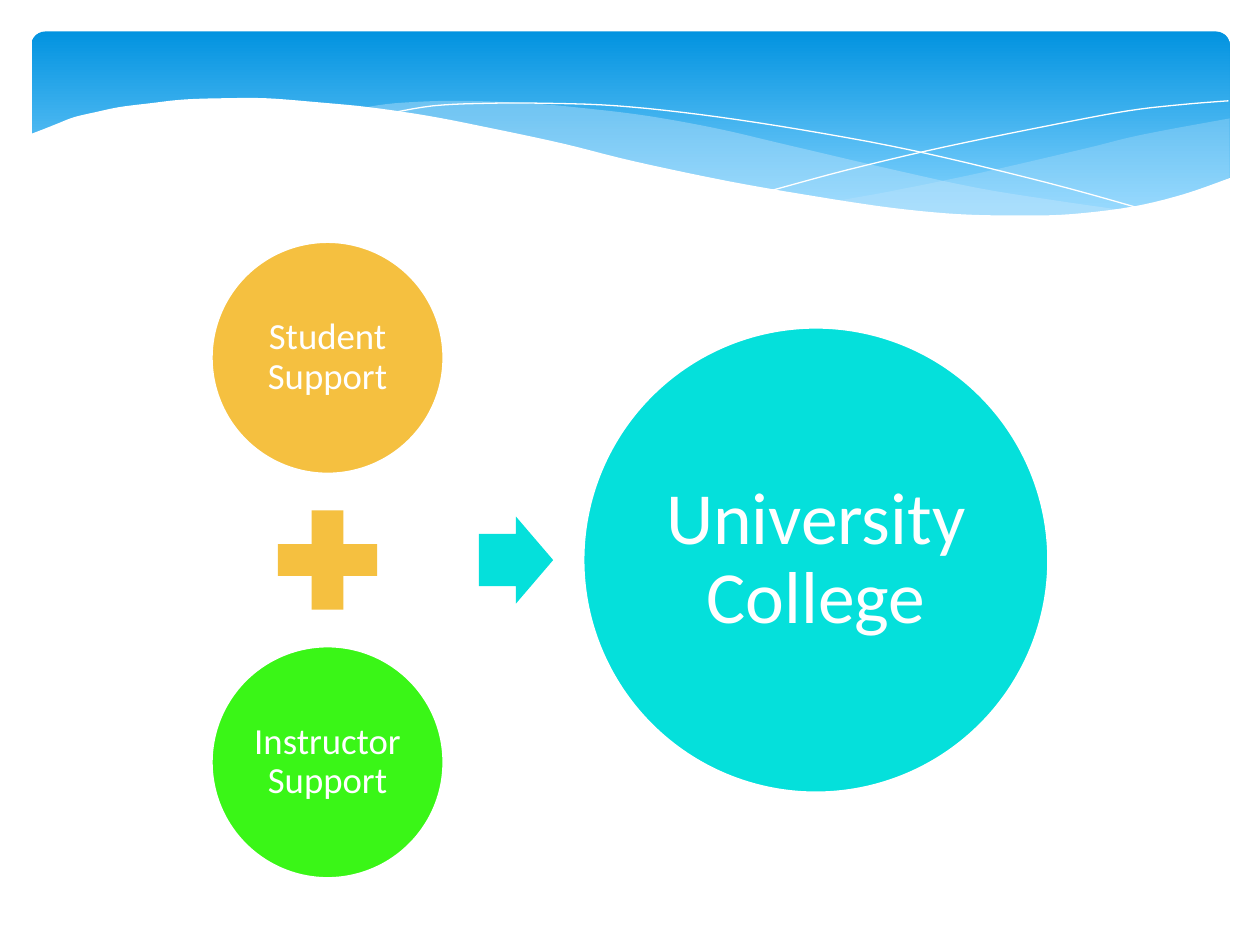
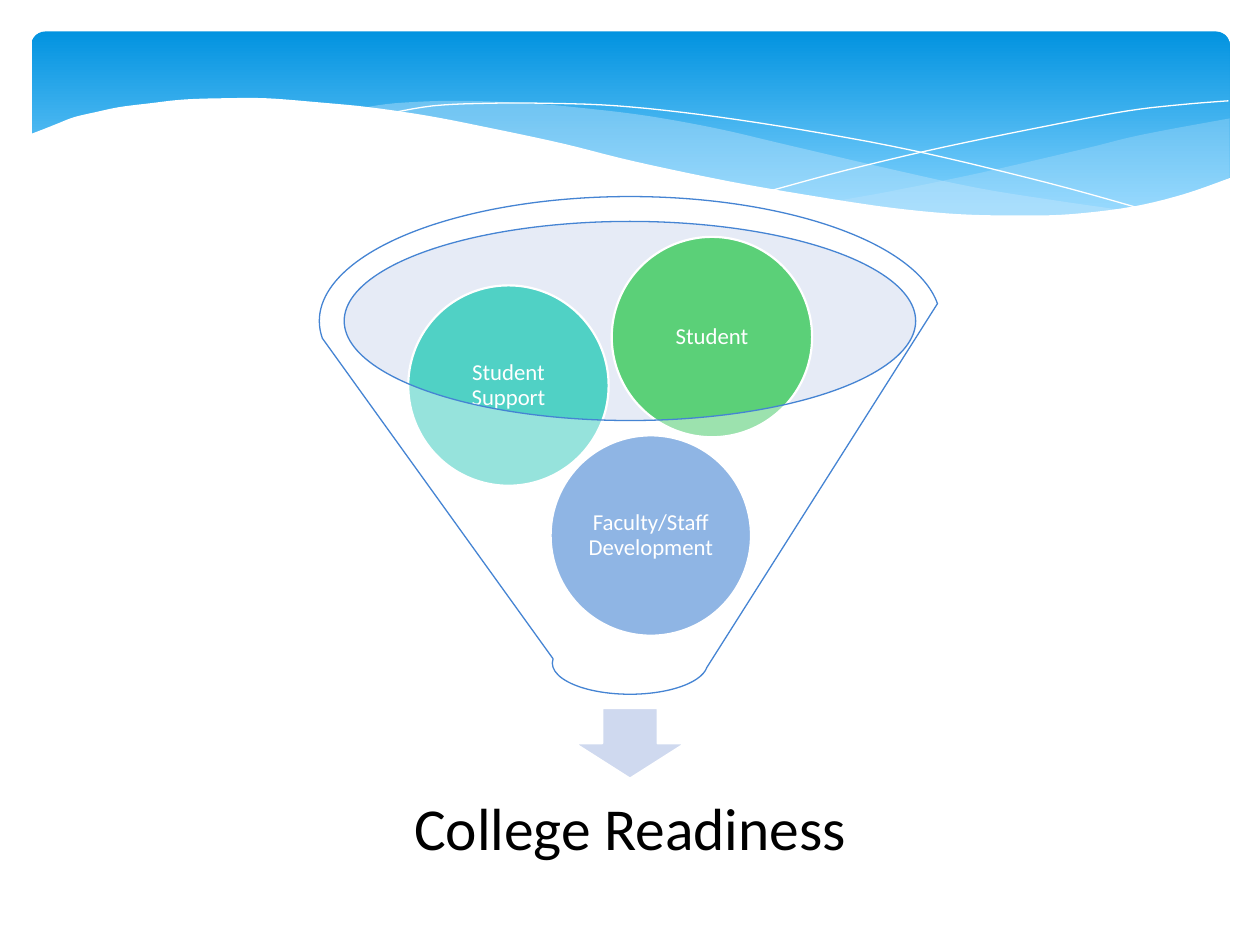
from lxml import etree
from pptx import Presentation
from pptx.dml.color import RGBColor
from pptx.enum.shapes import MSO_SHAPE
from pptx.enum.text import MSO_ANCHOR, PP_ALIGN
from pptx.oxml.ns import qn
from pptx.util import Inches, Pt

OVAL, ROUND_RECT = MSO_SHAPE.OVAL, MSO_SHAPE.ROUNDED_RECTANGLE
PLUS, FUNNEL = MSO_SHAPE.MATH_PLUS, MSO_SHAPE.FUNNEL
RIGHT_ARROW, DOWN_ARROW = MSO_SHAPE.RIGHT_ARROW, MSO_SHAPE.DOWN_ARROW
MIDDLE, CENTER = MSO_ANCHOR.MIDDLE, PP_ALIGN.CENTER

COLS, ROWS = 100, 75
FONT = "Calibri"
WHITE, BLACK = "FFFFFF", "000000"
SKY, PALE_SKY, VEIL = "0293E0", "83D3FE", "C6E7FC"
GOLD, LIME, CYAN = "F5C040", "3AF617", "05E0DB"
BLUE, TEAL, GREEN = "4584D3", "50D1C5", "5BD078"
RIM, PALE_ARROW = "C1CEEA", "CFD9EF"

RIGHT_VEIL_TOP = [(97.6, 9.4), (90.6, 10.7), (86.1, 11.8), (77.9, 13.7),
                  (70.6, 15.2), (66.1, 16)]
RIGHT_VEIL_BOTTOM = [(66.1, 16), (71.9, 16.7), (76.9, 17.1), (81.4, 17.2),
                     (86.3, 17), (90.5, 16.3), (94.2, 15.4), (97.6, 14.1)]
WIDE_VEIL_TOP = [(89.3, 16.7), (83.7, 15.9), (77.5, 14.9), (70.6, 13.4),
                 (62.9, 11.6), (56.9, 10.2), (51.4, 9.2), (46.5, 8.6),
                 (42, 8.2), (36.1, 8), (31.3, 8.2), (28.6, 8.6)]
WIDE_VEIL_BOTTOM = [(28.6, 8.6), (34.2, 9.4), (40.4, 10.6), (44.9, 11.6),
                    (53, 13.5), (60.1, 15), (66.5, 16.1), (72.2, 16.8),
                    (77.3, 17.2), (82.8, 17.3), (86.7, 17), (89.3, 16.7)]
FALLING_LINE = [(30.9, 9), (34.4, 8.4), (38.7, 8.2), (43.3, 8.2), (48.9, 8.4),
                (55.6, 9.1), (63.6, 10.3), (72.7, 12), (83.1, 14.5), (90.7, 16.6)]
RISING_LINE = [(61.3, 15.1), (67.2, 13.5), (74.8, 11.7), (83.6, 9.9),
               (89.5, 8.8), (93.8, 8.3), (97.5, 8)]
WAVE_EDGE = [(97.7, 14.1), (94, 15.4), (89.9, 16.4), (85, 17), (80.9, 17.1),
             (76.1, 17), (70.8, 16.5), (64.8, 15.6), (57.9, 14.4), (50.3, 12.8),
             (44.7, 11.4), (39.1, 10.2), (34, 9.2), (29.2, 8.5), (25, 8.1),
             (21.1, 7.8), (17.7, 7.8), (14.6, 7.9), (11.9, 8.2), (9.5, 8.5),
             (7.6, 8.9), (5.9, 9.3), (4.6, 9.8), (3.6, 10.2), (2.3, 10.7)]


def rgb(color):
    """Turn a hex string into a colour."""
    return RGBColor.from_string(color)


def smooth(points, steps=5):
    """Run a Catmull-Rom curve through the points."""
    padded = [points[0], *points, points[-1]]
    curve = [points[0]]
    for a, b, c, d in zip(padded, padded[1:], padded[2:], padded[3:]):
        for i in range(1, steps + 1):
            t = i / steps
            curve.append(tuple(
                (2 * q + (r - p) * t + (2 * p - 5 * q + 4 * r - e) * t ** 2
                 + (3 * q - p - 3 * r + e) * t ** 3) / 2
                for p, q, r, e in zip(a, b, c, d)))
    return curve


def write(shape, text, size, color=WHITE, inset=0.0):
    """Put centred text into a shape."""
    tf = shape.text_frame
    tf.word_wrap = True
    tf.vertical_anchor = MIDDLE
    tf.margin_left = tf.margin_right = Inches(inset)
    tf.margin_top = tf.margin_bottom = Inches(inset)
    p = tf.paragraphs[0]
    p.alignment = CENTER
    p.line_spacing = 0.9
    r = p.add_run()
    r.text = text
    r.font.name = FONT
    r.font.size = Pt(size)
    r.font.color.rgb = rgb(color)


class Deck:
    """Hold the style, the grid and the current slide."""

    def __init__(self):
        """Start a presentation with the wave on its layout."""
        self.prs = Presentation()
        self.prs.slide_width, self.prs.slide_height = Inches(10), Inches(7.5)
        self.cell_w = self.prs.slide_width / COLS
        self.cell_h = self.prs.slide_height / ROWS
        self.layout = self.prs.slide_layouts[6]
        self.s = None

    def slide(self):
        """Add a slide and make it current."""
        self.s = self.prs.slides.add_slide(self.layout)

    def box(self, cx, cy, w, h):
        """Give the frame of an element centred on a grid point."""
        return (round((cx - w / 2) * self.cell_w), round((cy - h / 2) * self.cell_h),
                round(w * self.cell_w), round(h * self.cell_h))

    def paint(self, sp, fill=None, alpha=None, line=None, width=0.0):
        """Set fill, transparency and outline, without a shadow."""
        sp.shadow.inherit = False
        if fill:
            sp.fill.solid()
            sp.fill.fore_color.rgb = rgb(fill)
        else:
            sp.fill.background()
        if alpha:
            color = sp.element.spPr.find(qn("a:solidFill"))[0]
            etree.SubElement(color, qn("a:alpha")).set("val", str(alpha * 1000))
        if line:
            sp.line.color.rgb = rgb(line)
            sp.line.width = Pt(width)
        else:
            sp.line.fill.background()
        return sp

    def shape(self, kind, cx, cy, w, h, adjust=(), **style):
        """Add a preset shape centred on a grid point."""
        sp = self.s.shapes.add_shape(kind, *self.box(cx, cy, w, h))
        for i, value in enumerate(adjust):
            sp.adjustments[i] = value
        return self.paint(sp, **style)

    def circle(self, text, cx, cy, size, fill, font_size, inset):
        """Add a labelled circle with a white outline."""
        sp = self.shape(OVAL, cx, cy, size, size, fill=fill, line=WHITE, width=1.25)
        write(sp, text, font_size, inset=inset)

    def caption(self, text, cx, cy, w, h, size):
        """Add a centred line of text."""
        write(self.s.shapes.add_textbox(*self.box(cx, cy, w, h)), text, size, BLACK)

    def outline(self, points, close=True, **style):
        """Draw a free outline through grid points."""
        emu = [(x * self.cell_w, y * self.cell_h) for x, y in points]
        fb = self.s.shapes.build_freeform(*emu[0])
        fb.add_line_segments(emu[1:], close=close)
        return self.paint(fb.convert_to_shape(), **style)

    def wave_header(self):
        """Build the wave header and move it to the shared layout."""
        band = self.shape(ROUND_RECT, 50.05, 10.3, 95.1, 15.6, adjust=[0.07])
        band.fill.gradient()
        band.fill.gradient_angle = 270
        for stop, color, position in zip(band.fill.gradient_stops,
                                         (SKY, PALE_SKY), (0, 0.9)):
            stop.color.rgb = rgb(color)
            stop.position = position
        parts = [band]
        for top, bottom, alpha in ((RIGHT_VEIL_TOP, RIGHT_VEIL_BOTTOM, 29),
                                   (WIDE_VEIL_TOP, WIDE_VEIL_BOTTOM, 40)):
            parts.append(self.outline(smooth(top) + smooth(bottom),
                                      fill=VEIL, alpha=alpha))
        for points in (FALLING_LINE, RISING_LINE):
            parts.append(self.outline(smooth(points), close=False, line=WHITE))
        parts.append(self.outline(smooth(WAVE_EDGE) + [(2.3, 22.4), (97.7, 22.4)],
                                  fill=WHITE))
        for part in parts:
            self.layout.shapes.element.append(part.element)


def support_slide(deck):
    """Show two kinds of support adding up to the college."""
    left, middle, step = 26, 44.45, 16.05
    deck.circle("Student Support", left, middle - step, 18.4, GOLD, 21, 0.03)
    deck.shape(PLUS, left, middle, 10.7, 10.7, fill=GOLD)
    deck.circle("Instructor Support", left, middle + step, 18.4, LIME, 21, 0.03)
    deck.shape(RIGHT_ARROW, 40.95, middle, 5.9, 6.9, adjust=[0.6, 0.5], fill=CYAN)
    deck.circle("University College", 64.75, middle, 36.9, CYAN, 42, 0.06)


def funnel_slide(deck):
    """Show a funnel leading to college readiness."""
    center = 50
    deck.shape(OVAL, center, 25.5, 45.5, 15.8, fill=RIM, alpha=40)
    deck.shape(DOWN_ARROW, center, 59, 8.8, 5.6, fill=PALE_ARROW,
               line=WHITE, width=1.25)
    deck.caption("College Readiness", center, 66, 42.3, 10.6, 34)
    for text, cx, cy, fill in (("Faculty/Staff Development", 51.65, 42.5, BLUE),
                               ("Student Support", 40.35, 30.6, TEAL),
                               ("Student", 56.5, 26.75, GREEN)):
        deck.circle(text, cx, cy, 15.9, fill, 13, 0.02)
    deck.shape(FUNNEL, center, 35.35, 49.3, 39.5, fill=WHITE, alpha=40,
               line=BLUE, width=0.75)


def main():
    """Build and save the slides."""
    deck = Deck()
    deck.slide()
    deck.wave_header()
    support_slide(deck)
    deck.slide()
    funnel_slide(deck)
    deck.prs.save("out.pptx")


if __name__ == "__main__":
    main()
